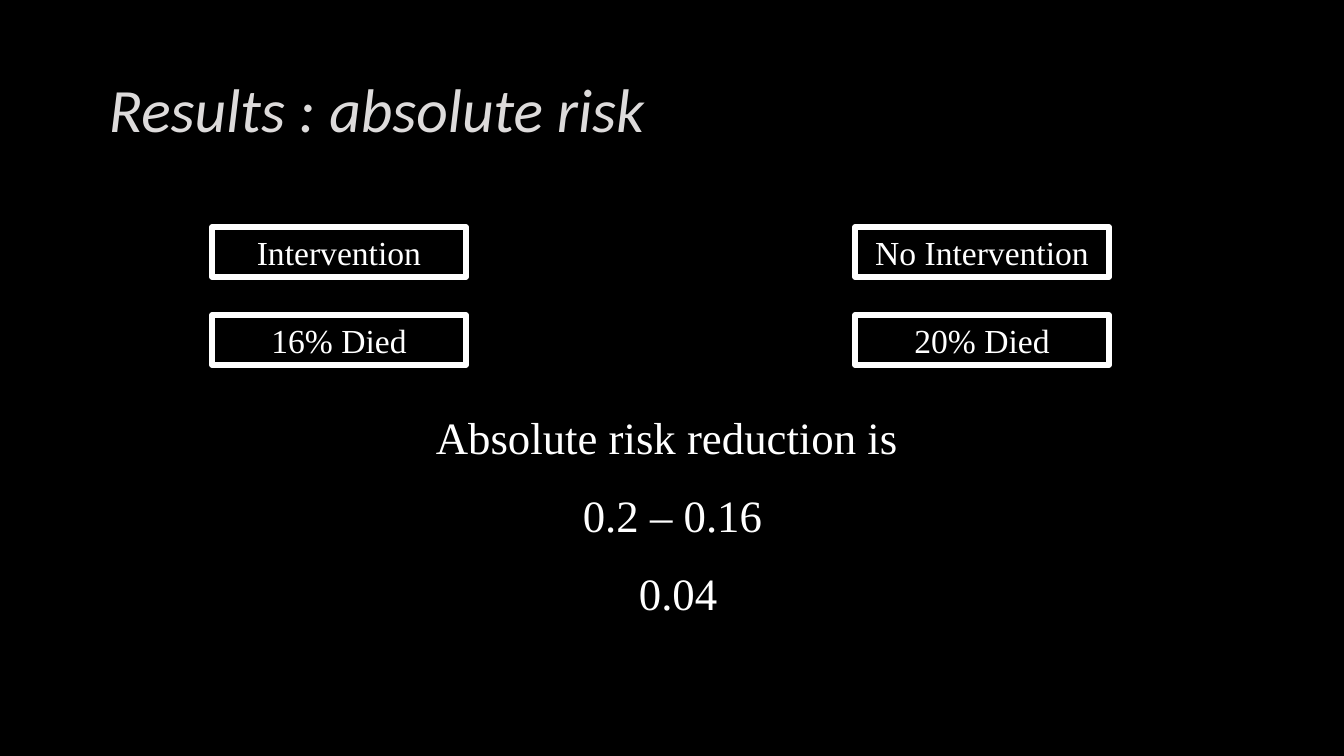
"""Build the slide on absolute risk results."""
from pptx import Presentation
from pptx import util as u
from pptx.dml.color import RGBColor
from pptx.enum import shapes, text

TITLE = "Results : absolute risk"
GROUPS = [
    ("Intervention", "16% Died"),
    ("No Intervention", "20% Died"),
]
REDUCTION = ["Absolute risk reduction is ", "0.2 – 0.16", " 0.04"]

SERIF = "Times New Roman"
BLACK, WHITE, GREY = "000000", "FFFFFF", "DDDBDB"
BOX_LEFT, BOX_TOP, BOX_WIDTH, BOX_HEIGHT = 212, 227, 254, 50
COLUMN_STEP, ROW_STEP = 643, 88


def px(length):
    return u.Emu(round(length * 914400 / 100.8))


def color(value):
    return RGBColor.from_string(value)


def write(shape, lines, size, font_name=SERIF, font_color=WHITE,
          align=text.PP_ALIGN.CENTER, italic=False, gap=0):
    frame = shape.text_frame
    frame.word_wrap = True
    frame.vertical_anchor = text.MSO_ANCHOR.MIDDLE
    frame.text = "\n".join(lines)
    for index, paragraph in enumerate(frame.paragraphs):
        paragraph.alignment = align
        paragraph.space_before = u.Pt(gap if index else 0)
        font = paragraph.font
        font.name, font.size, font.italic = font_name, u.Pt(size), italic
        font.color.rgb = color(font_color)


def add_text(slide, left, top, width, height):
    return slide.shapes.add_textbox(px(left), px(top), px(width), px(height))


def add_box(slide, label, column, row):
    box = slide.shapes.add_shape(
        shapes.MSO_SHAPE.RECTANGLE,
        px(BOX_LEFT + column * COLUMN_STEP), px(BOX_TOP + row * ROW_STEP),
        px(BOX_WIDTH), px(BOX_HEIGHT))
    box.shadow.inherit = False
    box.fill.background()
    box.line.color.rgb = color(WHITE)
    box.line.width = u.Pt(4)
    write(box, [label], 24)


def main():
    presentation = Presentation()
    presentation.slide_width, presentation.slide_height = px(1344), px(756)
    slide = presentation.slides.add_slide(presentation.slide_layouts[6])
    slide.background.fill.solid()
    slide.background.fill.fore_color.rgb = color(BLACK)

    title = add_text(slide, 93, 40, 1159, 146)
    write(title, [TITLE], 44, "Calibri", GREY, text.PP_ALIGN.LEFT, italic=True)
    title.text_frame.margin_left = px(16)
    title.text_frame.paragraphs[0].line_spacing = 0.9

    for column, labels in enumerate(GROUPS):
        for row, label in enumerate(labels):
            add_box(slide, label, column, row)

    write(add_text(slide, 220, 402, 905, 225), REDUCTION, 32, gap=17.5)
    presentation.save("out.pptx")


if __name__ == "__main__":
    main()
